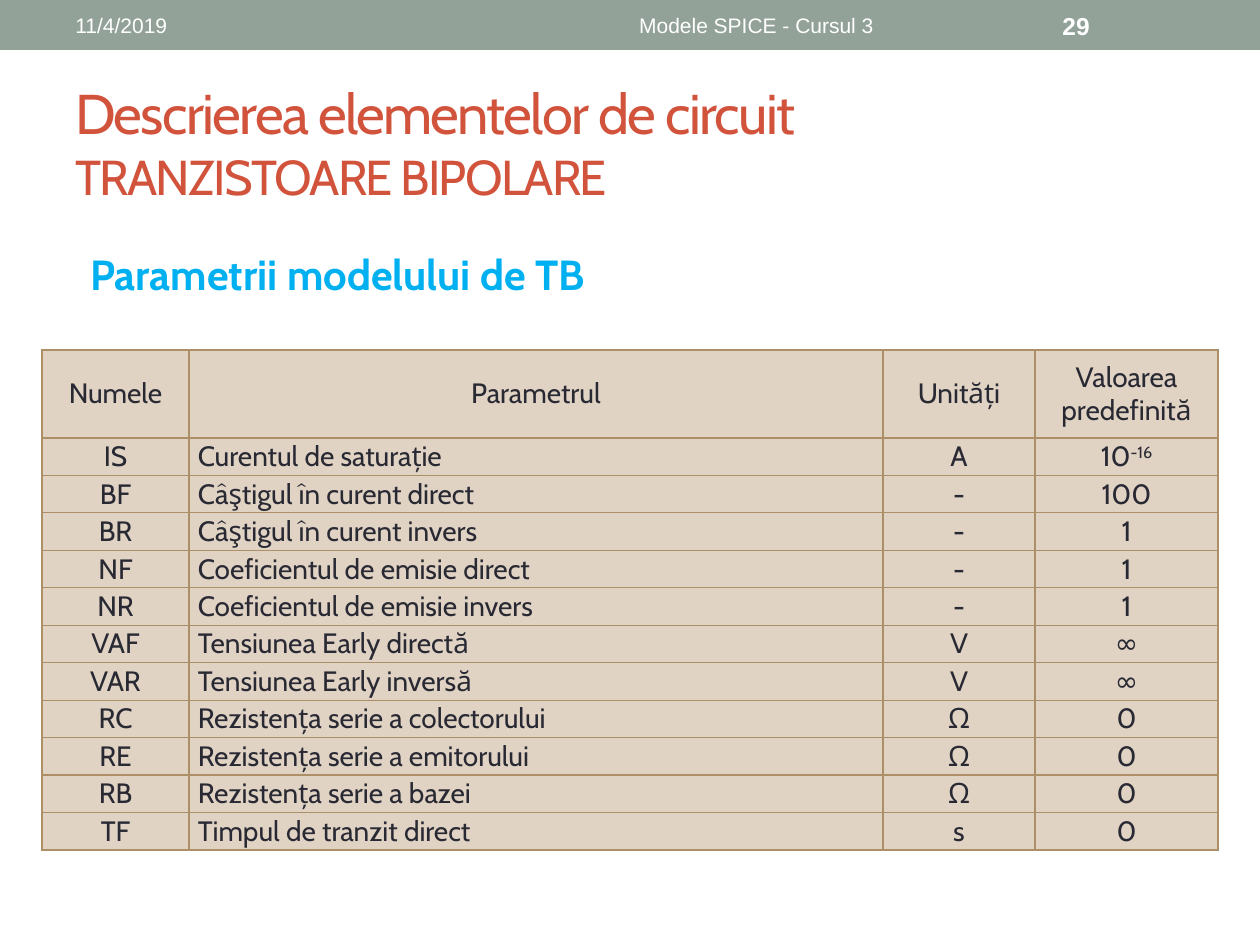
from dataclasses import dataclass

from lxml.etree import SubElement
from pptx import Presentation
from pptx.dml.color import RGBColor
from pptx.enum.shapes import MSO_SHAPE
from pptx.enum.text import MSO_ANCHOR, PP_ALIGN
from pptx.oxml.ns import qn
from pptx.slide import Slide
from pptx.table import _Cell
from pptx.text.text import Font
from pptx.util import Emu, Pt

PX_PER_INCH = 126
COLORS = {
    "band": "93A299",
    "white": "FFFFFF",
    "title": "D2533C",
    "accent": "00B0F0",
    "ink": "292934",
    "cell": "E0D3C4",
    "border": "AD8F67",
}


@dataclass(frozen=True)
class Span:
    text: str
    size: int


@dataclass(frozen=True)
class Label:
    left: int
    top: int
    width: int
    height: int
    lines: tuple[Span, ...]
    color: str
    face: str = "Arial"
    bold: bool = False
    align: PP_ALIGN = PP_ALIGN.LEFT
    anchor: MSO_ANCHOR = MSO_ANCHOR.MIDDLE
    spacing: int = 0
    margin: int = 0
    indent: int = 0


@dataclass(frozen=True)
class Parameter:
    name: str
    meaning: str
    unit: str
    default: str
    exponent: str = ""


LABELS = (
    Label(63, 3, 399, 45, (Span("11/4/2019", 12),), "white"),
    Label(473, 3, 567, 45, (Span("Modele SPICE - Cursul 3", 12),), "white", align=PP_ALIGN.CENTER),
    Label(1050, 3, 147, 45, (Span("29", 14),), "white", bold=True),
    Label(63, 63, 1134, 158,
          (Span("Descrierea elementelor de circuit", 32), Span("TRANZISTOARE BIPOLARE", 28)),
          "title", "Cabin", spacing=-100),
    Label(63, 242, 1134, 53, (Span("Parametrii modelului de TB", 24),), "accent", "Cabin",
          bold=True, anchor=MSO_ANCHOR.TOP, margin=50, indent=-35),
)

HEADER = Parameter("Numele", "Parametrul", "Unități", "Valoarea predefinită")
PARAMETERS = (
    Parameter("IS", "Curentul de saturație", "A", "10", "-16"),
    Parameter("BF", "Câştigul în curent direct", "-", "100"),
    Parameter("BR", "Câştigul în curent invers", "-", "1"),
    Parameter("NF", "Coeficientul de emisie direct", "-", "1"),
    Parameter("NR", "Coeficientul de emisie invers", "-", "1"),
    Parameter("VAF", "Tensiunea Early directă", "V", "∞"),
    Parameter("VAR", "Tensiunea Early inversă", "V", "∞"),
    Parameter("RC", "Rezistența serie a colectorului", "Ω", "0"),
    Parameter("RE", "Rezistența serie a emitorului", "Ω", "0"),
    Parameter("RB", "Rezistența serie a bazei", "Ω", "0"),
    Parameter("TF", "Timpul de tranzit direct", "s", "0"),
)
COLUMN_WIDTHS = (147, 694, 152, 183)
TABLE_LEFT, TABLE_TOP, TABLE_HEIGHT, HEADER_HEIGHT = 42, 350, 500, 88


def px(length: float) -> Emu:
    """Turn pixels into EMU."""
    return Emu(round(length * 914400 / PX_PER_INCH))


def rgb(name: str) -> RGBColor:
    """Look up a named colour."""
    return RGBColor.from_string(COLORS[name])


def style_font(font: Font, face: str, color: str, bold: bool = False) -> None:
    """Set face, colour and weight."""
    font.name = face
    font.bold = bold
    font.color.rgb = rgb(color)


def draw_band(page: Slide) -> None:
    """Draw the strip across the top."""
    band = page.shapes.add_shape(MSO_SHAPE.RECTANGLE, 0, 0, px(1260), px(50))
    band.shadow.inherit = False
    band.fill.solid()
    band.fill.fore_color.rgb = rgb("band")
    band.line.fill.background()


def draw_label(page: Slide, label: Label) -> None:
    """Draw one text box, its lines parted by line breaks."""
    box = page.shapes.add_textbox(px(label.left), px(label.top), px(label.width), px(label.height))
    frame = box.text_frame
    frame.word_wrap = True
    frame.vertical_anchor = label.anchor
    para = frame.paragraphs[0]
    para.alignment = label.align
    style_font(para.font, label.face, label.color, label.bold)
    properties = para._p.get_or_add_pPr()
    properties.set("marL", str(px(label.margin)))
    properties.set("indent", str(px(label.indent)))
    for number, line in enumerate(label.lines):
        if number:
            para.add_line_break()
        span = para.add_run()
        span.text = line.text
        span.font.size = Pt(line.size)
        if label.spacing:
            span.font._element.set("spc", str(label.spacing))


def draw_borders(cell: _Cell) -> None:
    """Give a cell thin lines on all four sides."""
    for side in ("lnL", "lnR", "lnT", "lnB"):
        line = SubElement(cell._tc.get_or_add_tcPr(), qn(f"a:{side}"), w=str(Pt(0.75)))
        fill = SubElement(line, qn("a:solidFill"))
        SubElement(fill, qn("a:srgbClr"), val=COLORS["border"])


def fill_cell(cell: _Cell, text: str, align: PP_ALIGN, exponent: str = "") -> None:
    """Write and style one table cell."""
    cell.margin_left = cell.margin_right = px(9)
    cell.margin_top = cell.margin_bottom = 0
    cell.vertical_anchor = MSO_ANCHOR.MIDDLE
    draw_borders(cell)
    cell.fill.solid()
    cell.fill.fore_color.rgb = rgb("cell")
    para = cell.text_frame.paragraphs[0]
    para.alignment = align
    para.font.size = Pt(16)
    style_font(para.font, "Cabin", "ink")
    para.add_run().text = text
    if exponent:
        span = para.add_run()
        span.text = exponent
        span.font._element.set("baseline", "30000")


def draw_table(page: Slide) -> None:
    """Draw the table of model parameters."""
    rows = (HEADER, *PARAMETERS)
    table = page.shapes.add_table(
        len(rows), len(COLUMN_WIDTHS), px(TABLE_LEFT), px(TABLE_TOP),
        px(sum(COLUMN_WIDTHS)), px(TABLE_HEIGHT),
    ).table
    table.first_row = table.horz_banding = False
    for column, width in zip(table.columns, COLUMN_WIDTHS):
        column.width = px(width)
    row_height = (TABLE_HEIGHT - HEADER_HEIGHT) / len(PARAMETERS)
    for number, row in enumerate(rows):
        table.rows[number].height = px(row_height if number else HEADER_HEIGHT)
        meaning_align = PP_ALIGN.LEFT if number else PP_ALIGN.CENTER
        fill_cell(table.cell(number, 0), row.name, PP_ALIGN.CENTER)
        fill_cell(table.cell(number, 1), row.meaning, meaning_align)
        fill_cell(table.cell(number, 2), row.unit, PP_ALIGN.CENTER)
        fill_cell(table.cell(number, 3), row.default, PP_ALIGN.CENTER, row.exponent)


def main() -> None:
    """Build the slide and save the deck."""
    deck = Presentation()
    deck.slide_width, deck.slide_height = px(1260), px(945)
    page = deck.slides.add_slide(deck.slide_layouts[6])
    draw_band(page)
    for label in LABELS:
        draw_label(page, label)
    draw_table(page)
    deck.save("out.pptx")


if __name__ == "__main__":
    main()
